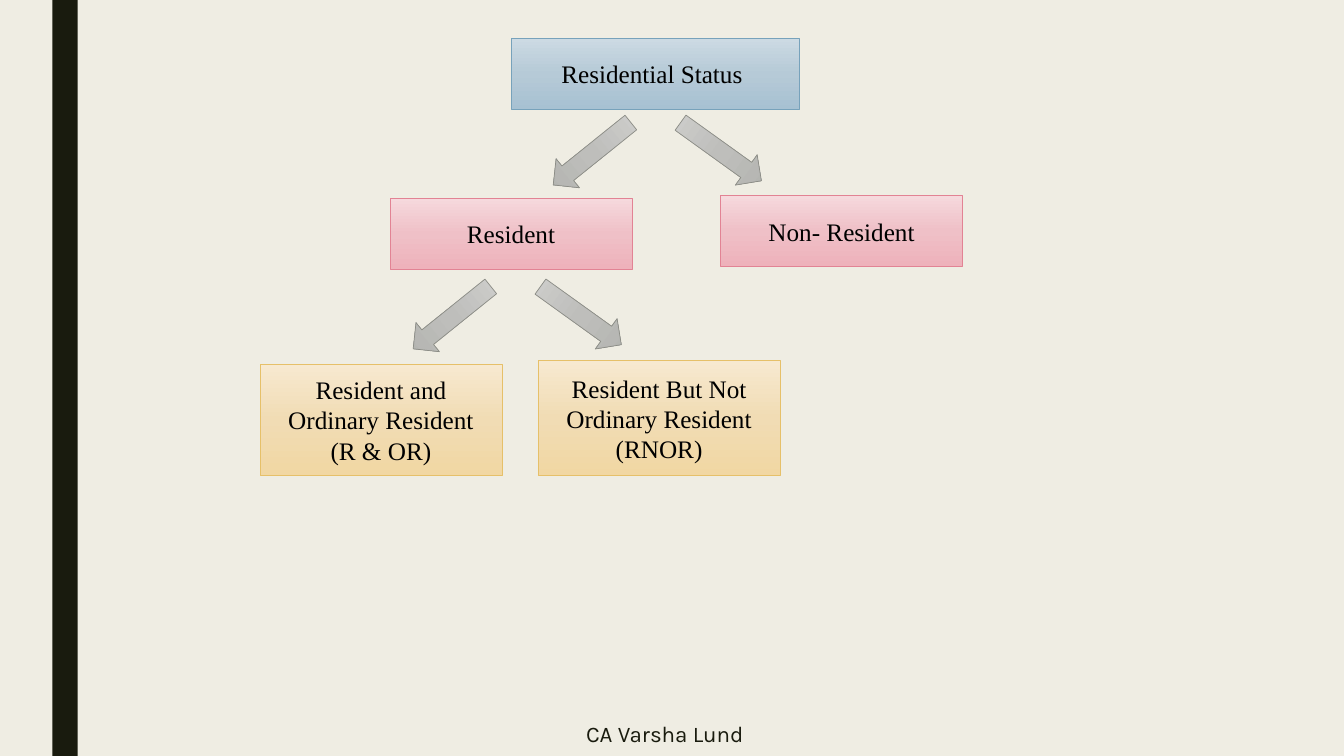
from copy import deepcopy
from dataclasses import dataclass

from pptx import Presentation
from pptx.dml.color import RGBColor
from pptx.enum.shapes import MSO_SHAPE as Preset
from pptx.enum.text import MSO_ANCHOR as Anchor, PP_ALIGN as Align
from pptx.oxml.ns import qn
from pptx.shapes.autoshape import Shape
from pptx.slide import Slide
from pptx.util import Cm, Pt

BACKGROUND = RGBColor(0xEF, 0xED, 0xE3)
DARK = RGBColor(0x19, 0x1B, 0x0E)
BLACK = RGBColor(0x00, 0x00, 0x00)


@dataclass(frozen=True)
class Style:
    top: RGBColor
    middle: RGBColor
    bottom: RGBColor
    line: RGBColor


@dataclass(frozen=True)
class Box:
    lines: tuple[str, ...]
    left: float
    top: float
    width: float
    height: float
    style: Style


@dataclass(frozen=True)
class Arrow:
    left: float
    top: float
    rotation: float


BLUE = Style(RGBColor(0xCC, 0xDA, 0xE3), RGBColor(0xB6, 0xCA, 0xD7),
             RGBColor(0xA7, 0xC1, 0xD2), RGBColor(0x77, 0xA2, 0xBB))
PINK = Style(RGBColor(0xF6, 0xD9, 0xDD), RGBColor(0xEF, 0xC0, 0xC7),
             RGBColor(0xEE, 0xB2, 0xBB), RGBColor(0xE2, 0x83, 0x94))
GOLD = Style(RGBColor(0xF7, 0xE9, 0xD0), RGBColor(0xF1, 0xDC, 0xB4),
             RGBColor(0xF1, 0xD7, 0xA3), RGBColor(0xE6, 0xC0, 0x69))
GREY = Style(RGBColor(0xCF, 0xCF, 0xCD), RGBColor(0xBE, 0xBE, 0xBB),
             RGBColor(0xB2, 0xB3, 0xAF), RGBColor(0x8C, 0x8D, 0x86))

BOXES = (
    Box(("Residential Status ",), 12.88, 0.97, 7.26, 1.78, BLUE),
    Box(("Resident",), 9.83, 5, 6.1, 1.78, PINK),
    Box(("Non- Resident",), 18.16, 4.93, 6.1, 1.78, PINK),
    Box(("Resident and Ordinary Resident", "(R & OR)"), 6.55, 9.17, 6.1, 2.82, GOLD),
    Box(("Resident But Not Ordinary Resident", "(RNOR)"), 13.56, 9.09, 6.1, 2.9, GOLD),
)

BRANCHES = ((14.45, 2.62), (10.92, 6.75))
ARROWS = tuple(
    Arrow(left + shift, top - rise, rotation)
    for left, top in BRANCHES
    for shift, rise, rotation in ((0, 0, 51.2), (3.25, 0.05, 305.7))
)


def apply_style(shape: Shape, style: Style) -> None:
    """Give the shape a three-stop downward gradient and a thin outline."""
    shape.shadow.inherit = False
    shape.fill.gradient()
    shape.fill.gradient_angle = 270
    stop_list = shape.element.spPr.find(qn("a:gradFill")).find(qn("a:gsLst"))
    stop_list.insert(1, deepcopy(stop_list[0]))
    colors = (style.top, style.middle, style.bottom)
    for index, (stop, color) in enumerate(zip(shape.fill.gradient_stops, colors)):
        stop.position = index / 2
        stop.color.rgb = color
    shape.line.color.rgb = style.line
    shape.line.width = Pt(0.5)


def write_text(shape: Shape, lines: tuple[str, ...], *, font: str,
               size: float, color: RGBColor) -> None:
    frame = shape.text_frame
    frame.word_wrap = True
    frame.vertical_anchor = Anchor.MIDDLE
    for index, line in enumerate(lines):
        paragraph = frame.add_paragraph() if index else frame.paragraphs[0]
        paragraph.alignment = Align.CENTER
        run = paragraph.add_run()
        run.text = line
        run.font.name = font
        run.font.size = Pt(size)
        run.font.color.rgb = color


def add_side_bar(slide: Slide, height: int) -> None:
    bar = slide.shapes.add_shape(Preset.RECTANGLE, Cm(1.32), 0, Cm(0.64), height)
    bar.shadow.inherit = False
    bar.fill.solid()
    bar.fill.fore_color.rgb = DARK
    bar.line.fill.background()


def add_box(slide: Slide, box: Box) -> None:
    shape = slide.shapes.add_shape(Preset.RECTANGLE, Cm(box.left), Cm(box.top),
                                   Cm(box.width), Cm(box.height))
    apply_style(shape, box.style)
    write_text(shape, box.lines, font="Times New Roman", size=18, color=BLACK)


def add_arrow(slide: Slide, arrow: Arrow) -> None:
    shape = slide.shapes.add_shape(Preset.DOWN_ARROW, Cm(arrow.left), Cm(arrow.top),
                                   Cm(0.94), Cm(2.51))
    shape.rotation = arrow.rotation
    apply_style(shape, GREY)


def add_footer(slide: Slide) -> None:
    footer = slide.shapes.add_textbox(Cm(8.03), Cm(17.93), Cm(17.45), Cm(1.12))
    write_text(footer, ("CA Varsha Lund",), font="Karla", size=16, color=DARK)


def main() -> None:
    presentation = Presentation()
    presentation.slide_width = Cm(33.87)
    presentation.slide_height = Cm(19.05)
    slide = presentation.slides.add_slide(presentation.slide_layouts[6])
    slide.background.fill.solid()
    slide.background.fill.fore_color.rgb = BACKGROUND

    add_side_bar(slide, presentation.slide_height)
    for box in BOXES:
        add_box(slide, box)
    for arrow in ARROWS:
        add_arrow(slide, arrow)
    add_footer(slide)
    presentation.save("out.pptx")


if __name__ == "__main__":
    main()
